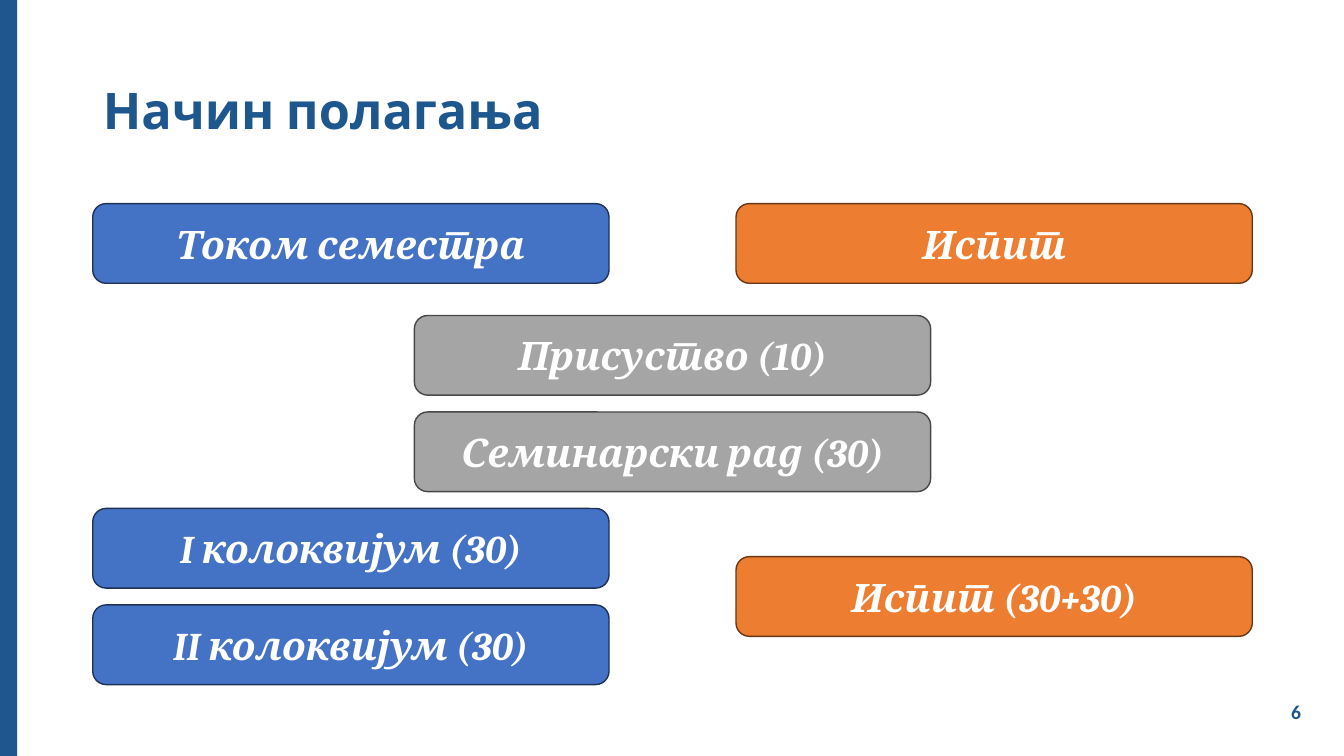
from pptx import Presentation, util as u
from pptx.dml.color import RGBColor
from pptx.enum import lang, shapes, text

NAVY = RGBColor(0x1E, 0x57, 0x8E)
WHITE = RGBColor(0xFF, 0xFF, 0xFF)
BLUE = RGBColor(0x44, 0x72, 0xC4)
BLUE_EDGE = RGBColor(0x1E, 0x32, 0x56)
ORANGE = RGBColor(0xED, 0x7D, 0x31)
ORANGE_EDGE = RGBColor(0x68, 0x37, 0x15)
GRAY = RGBColor(0xA5, 0xA5, 0xA5)
GRAY_EDGE = RGBColor(0x48, 0x48, 0x48)

MARGIN, COLUMN_STEP = 0.92, 3.19
HEADING_TOP, FIRST_ROW, ROW_STEP = 2.02, 3.13, 0.957
BOX_WIDTH, BOX_HEIGHT = 5.12, 0.79


def write(shape, wording, size, face, color, align, italic=None):
    frame = shape.text_frame
    frame.word_wrap = True
    frame.vertical_anchor = text.MSO_ANCHOR.MIDDLE
    paragraph = frame.paragraphs[0]
    run = paragraph.add_run()
    run.text = wording
    run.font.language_id = lang.MSO_LANGUAGE_ID.SERBIAN_CYRILLIC
    paragraph.alignment = align
    font = paragraph.font
    font.size = u.Pt(size)
    font.name = face
    font.bold = True
    font.italic = italic
    font.color.rgb = color
    return paragraph


def add_block(slide, kind, left, top, width, height, fill):
    block = slide.shapes.add_shape(
        kind, u.Inches(left), u.Inches(top), u.Inches(width), u.Inches(height))
    block.shadow.inherit = False
    block.fill.solid()
    block.fill.fore_color.rgb = fill
    return block


deck = Presentation()
deck.slide_width, deck.slide_height = u.Inches(13.33), u.Inches(7.5)
slide = deck.slides.add_slide(deck.slide_layouts[5])

side_band = add_block(slide, shapes.MSO_SHAPE.RECTANGLE, 0, 0, 0.17, 7.5, NAVY)
side_band.line.fill.background()

heading = slide.shapes.title
heading.left, heading.top = u.Inches(MARGIN), u.Inches(0.4)
heading.width, heading.height = u.Inches(11.5), u.Inches(1.45)
heading_line = write(heading, "Начин полагања", 36, "Cabin", NAVY, text.PP_ALIGN.LEFT)
heading_line.line_spacing = 0.9

page_number = slide.shapes.add_textbox(
    u.Inches(12.6), u.Inches(6.86), u.Inches(0.51), u.Inches(0.4))
write(page_number, "6", 14, "Calibri", NAVY, text.PP_ALIGN.CENTER)

schemes = [(BLUE, BLUE_EDGE), (GRAY, GRAY_EDGE), (ORANGE, ORANGE_EDGE)]
requirements = [
    ("Током семестра", 0, None),
    ("Испит", 2, None),
    ("Присуство (10)", 1, 0),
    ("Семинарски рад (30)", 1, 1),
    ("I колоквијум (30)", 0, 2),
    ("II колоквијум (30)", 0, 3),
    ("Испит (30+30)", 2, 2.5),
]
for wording, column, row in requirements:
    fill, edge = schemes[column]
    top = HEADING_TOP if row is None else FIRST_ROW + row * ROW_STEP
    requirement = add_block(
        slide, shapes.MSO_SHAPE.ROUNDED_RECTANGLE,
        MARGIN + column * COLUMN_STEP, top, BOX_WIDTH, BOX_HEIGHT, fill)
    requirement.line.color.rgb = edge
    requirement.line.width = u.Pt(1)
    write(requirement, wording, 28, "Cambria", WHITE, text.PP_ALIGN.CENTER, True)

deck.save("out.pptx")
